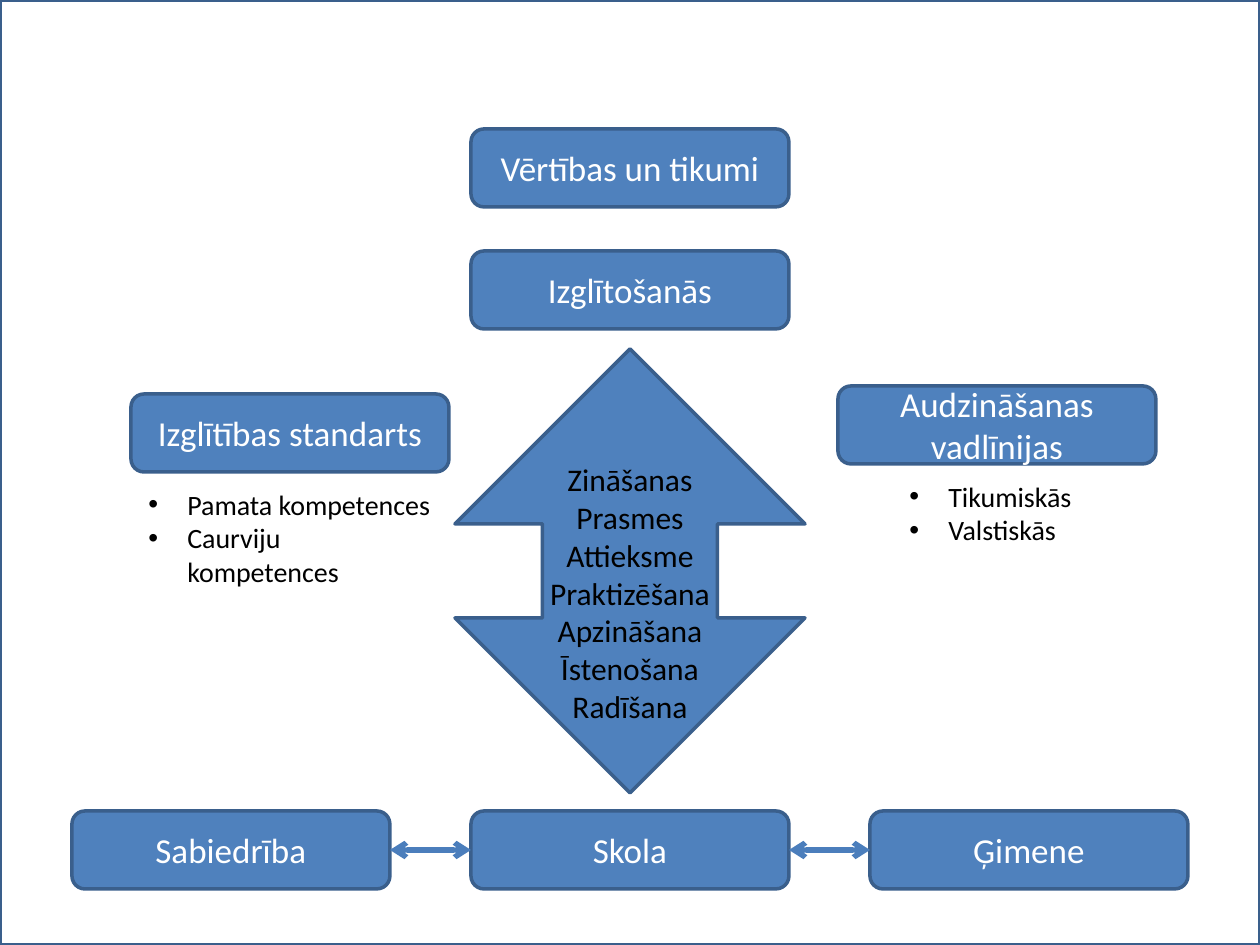
from lxml import etree
from pptx import Presentation
from pptx.dml.color import RGBColor
from pptx.enum.shapes import MSO_CONNECTOR, MSO_SHAPE
from pptx.enum.text import MSO_ANCHOR, MSO_AUTO_SIZE, PP_ALIGN
from pptx.oxml.ns import qn
from pptx.util import Emu, Pt

RECTANGLE = MSO_SHAPE.RECTANGLE
ROUNDED = MSO_SHAPE.ROUNDED_RECTANGLE
UP_DOWN_ARROW = MSO_SHAPE.UP_DOWN_ARROW
STRAIGHT = MSO_CONNECTOR.STRAIGHT
CENTER, LEFT = PP_ALIGN.CENTER, PP_ALIGN.LEFT
MIDDLE = MSO_ANCHOR.MIDDLE
FIT_SHAPE = MSO_AUTO_SIZE.SHAPE_TO_FIT_TEXT

EMU_PER_PX = 914400 / 126
FONT = "Calibri"
COLORS = {"white": "FFFFFF", "black": "000000", "box": "4F81BD",
          "outline": "3A5F8C", "link": "4B7EBC"}
BOX_WIDTH, BOX_HEIGHT = 318, 78
BULLET_INDENT = 39


def px(length):
    return Emu(round(length * EMU_PER_PX))


def color(name):
    return RGBColor.from_string(COLORS[name])


def add_filled_shape(shapes, kind, box, fill):
    shape = shapes.add_shape(kind, *map(px, box))
    shape.shadow.inherit = False
    shape.fill.solid()
    shape.fill.fore_color.rgb = color(fill)
    shape.line.color.rgb = color("outline")
    shape.line.width = Pt(2)
    return shape


def write_run(paragraph, text, size, font_color, alignment):
    paragraph.alignment = alignment
    run = paragraph.add_run()
    run.text = text
    run.font.name = FONT
    run.font.size = Pt(size)
    run.font.color.rgb = color(font_color)


def add_bullet(paragraph):
    properties = paragraph._p.get_or_add_pPr()
    properties.set("marL", str(px(BULLET_INDENT)))
    properties.set("indent", str(-px(BULLET_INDENT)))
    etree.SubElement(properties, qn("a:buFont"), typeface="Arial")
    etree.SubElement(properties, qn("a:buChar"), char="•")


def add_lines(shapes, box, lines, size, wrap=False, bullets=False):
    """Place a text box with one paragraph per line."""
    frame = shapes.add_textbox(*map(px, box)).text_frame
    frame.word_wrap = wrap
    frame.auto_size = FIT_SHAPE
    for index, line in enumerate(lines):
        paragraph = frame.add_paragraph() if index else frame.paragraphs[0]
        if bullets:
            add_bullet(paragraph)
        write_run(paragraph, line, size, "black", LEFT if bullets else CENTER)


def add_label_box(shapes, left, top, text):
    shape = add_filled_shape(shapes, ROUNDED, (left, top, BOX_WIDTH, BOX_HEIGHT), "box")
    frame = shape.text_frame
    frame.word_wrap = True
    frame.vertical_anchor = MIDDLE
    write_run(frame.paragraphs[0], text, 20, "white", CENTER)


def add_double_arrow(shapes, start, end, y):
    connector = shapes.add_connector(STRAIGHT, px(start), px(y), px(end), px(y))
    connector.line.color.rgb = color("link")
    connector.line.width = Pt(3)
    line = connector.line._get_or_add_ln()
    for end_name in ("a:headEnd", "a:tailEnd"):
        etree.SubElement(line, qn(end_name), type="arrow")
    etree.SubElement(connector._element.spPr, qn("a:effectLst"))


def add_goals(shapes, left, top):
    for index, text in enumerate(("Vērtības un tikumi", "Izglītošanās")):
        add_label_box(shapes, left, top + index * 122, text)


def add_process_arrow(shapes, left, top):
    add_filled_shape(shapes, UP_DOWN_ARROW, (left, top, 350, 444), "box")
    steps = ("Zināšanas", "Prasmes", "Attieksme", "Praktizēšana",
             "Apzināšana", "Īstenošana", "Radīšana")
    add_lines(shapes, (left + 82, top + 105, 186, 280), steps, 18)


def add_document(shapes, left, top, title, points, text_offset, text_size, wrap):
    """Place a label box with its bullet list below."""
    add_label_box(shapes, left, top, title)
    text_box = (left + text_offset, top + BOX_HEIGHT + 9, *text_size)
    add_lines(shapes, text_box, points, 16, wrap, bullets=True)


def add_partners(shapes, left, top):
    pitch = 399
    names = ("Sabiedrība", "Skola", "Ģimene")
    for index, name in enumerate(names):
        add_label_box(shapes, left + index * pitch, top, name)
    for index in range(len(names) - 1):
        start = left + index * pitch + BOX_WIDTH
        add_double_arrow(shapes, start, left + (index + 1) * pitch,
                         top + BOX_HEIGHT // 2)


def main():
    presentation = Presentation()
    presentation.slide_width, presentation.slide_height = px(1260), px(945)
    slide = presentation.slides.add_slide(presentation.slide_layouts[6])
    shapes = slide.shapes.add_group_shape().shapes

    add_filled_shape(shapes, RECTANGLE, (0, 0, 1260, 945), "white")
    add_goals(shapes, 471, 129)
    add_document(shapes, 131, 394, "Izglītības standarts",
                 ("Pamata kompetences", "Caurviju kompetences"),
                 5, (312, 149), True)
    add_document(shapes, 838, 386, "Audzināšanas vadlīnijas",
                 ("Tikumiskās", "Valstiskās"), 59, (189, 81), False)
    add_process_arrow(shapes, 455, 349)
    add_partners(shapes, 72, 811)
    presentation.save("out.pptx")


if __name__ == "__main__":
    main()
